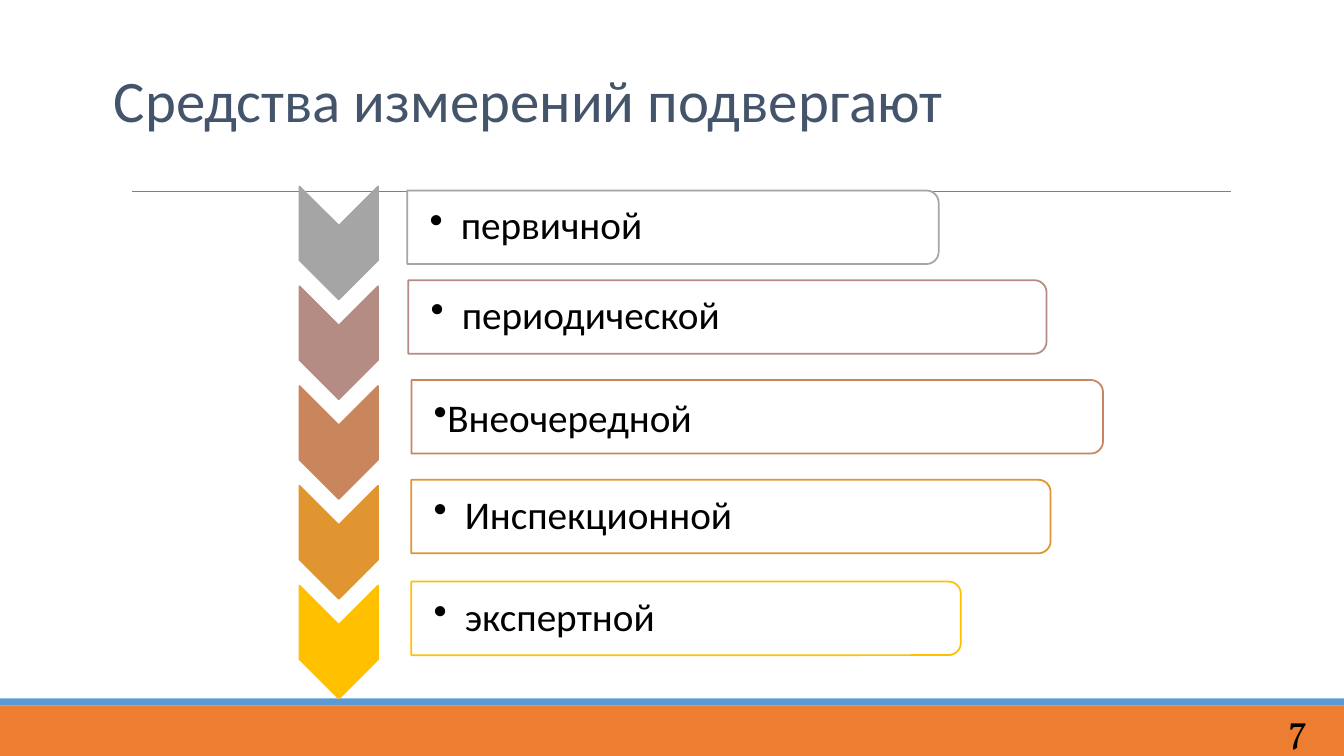
from lxml import etree
from pptx import Presentation
from pptx.dml.color import RGBColor
from pptx.enum.shapes import MSO_CONNECTOR, MSO_SHAPE
from pptx.enum.text import MSO_ANCHOR
from pptx.oxml.ns import qn
from pptx.util import Inches, Pt

RECTANGLE, CHEVRON = MSO_SHAPE.RECTANGLE, MSO_SHAPE.CHEVRON
ROUND_TOP = MSO_SHAPE.ROUND_2_SAME_RECTANGLE
STRAIGHT = MSO_CONNECTOR.STRAIGHT
TOP, MIDDLE, BOTTOM = MSO_ANCHOR.TOP, MSO_ANCHOR.MIDDLE, MSO_ANCHOR.BOTTOM

BLACK = RGBColor(0, 0, 0)
WHITE = RGBColor(0xFF, 0xFF, 0xFF)
SLATE = RGBColor(0x44, 0x54, 0x6A)
ORANGE = RGBColor(0xED, 0x7D, 0x31)
BLUE = RGBColor(0x5B, 0x9B, 0xD5)
RULE_GRAY = RGBColor(0x80, 0x80, 0x80)

SLIDE_W, SLIDE_H = 13.33, 7.5
STEP = 0.99
CHEVRON_W, CHEVRON_H = 0.78, 1.12
BAR_H, BAR_INSET = 0.73, 0.035
HANGING = 0.31

CHECKS = [
    ("первичной", RGBColor(0xA5, 0xA5, 0xA5), 4.04, 1.89, 5.27, HANGING),
    ("периодической", RGBColor(0xB4, 0x8C, 0x83), 4.05, 2.78, 6.33, HANGING),
    ("Внеочередной", RGBColor(0xC9, 0x86, 0x5C), 4.08, 3.77, 6.86, 0),
    ("Инспекционной", RGBColor(0xE1, 0x95, 0x30), 4.08, 4.76, 6.34, HANGING),
    ("экспертной", RGBColor(0xFF, 0xC0, 0x00), 4.08, 5.77, 5.45, HANGING),
]


def add_block(slide, kind, box, fill, outline=None):
    block = slide.shapes.add_shape(kind, *map(Inches, box))
    block.shadow.inherit = False
    block.fill.solid()
    block.fill.fore_color.rgb = fill
    if outline is None:
        block.line.fill.background()
    else:
        block.line.color.rgb = outline
        block.line.width = Pt(1.25)
    return block


def add_quarter_turned(slide, kind, box, fill, outline):
    left, top, width, height = box
    unturned = (left + (width - height) / 2, top + (height - width) / 2, height, width)
    block = add_block(slide, kind, unturned, fill, outline)
    block.rotation = 90
    return block


def add_text(slide, box, text, size, color, font_name, anchor):
    frame = slide.shapes.add_textbox(*map(Inches, box)).text_frame
    frame.word_wrap = True
    frame.vertical_anchor = anchor
    paragraph = frame.paragraphs[0]
    paragraph.text = text
    paragraph.font.size = Pt(size)
    paragraph.font.name = font_name
    paragraph.font.color.rgb = color
    return frame


def add_bullet(paragraph, indent):
    properties = paragraph._p.get_or_add_pPr()
    properties.set("marL", str(Inches(indent)))
    properties.set("indent", str(-Inches(indent)))
    bullet = etree.Element(qn("a:buChar"), char="•")
    properties.find(qn("a:defRPr")).addprevious(bullet)


def add_footer(slide, top, height):
    stripe = 0.07
    add_block(slide, RECTANGLE, (0, top + stripe, SLIDE_W, height - stripe), ORANGE)
    add_block(slide, RECTANGLE, (0, top, SLIDE_W, stripe), BLUE)
    number = add_text(slide, (12.68, top - 0.01, 0.5, height + 0.01),
                      "7", 28, BLACK, "Vollkorn", BOTTOM)
    number.paragraphs[0].line_spacing = 0.85


def add_heading(slide, left, top, width, height):
    rule = slide.shapes.add_connector(
        STRAIGHT, Inches(1.31), Inches(1.9), Inches(12.21), Inches(1.9))
    rule.line.color.rgb = RULE_GRAY
    rule.line.width = Pt(0.5)
    etree.SubElement(rule._element.spPr, qn("a:effectLst"))
    add_text(slide, (left, top, width, height),
             "Средства измерений подвергают", 42, SLATE, "Calibri", TOP)


def add_check_bar(slide, left, top, width, text, color, indent):
    bar = add_quarter_turned(slide, ROUND_TOP, (left, top, width, BAR_H), WHITE, color)
    white = bar._element.spPr.find(qn("a:solidFill"))[0]
    etree.SubElement(white, qn("a:alpha"), val="90000")
    frame = add_text(slide, (left, top + BAR_INSET, width - BAR_INSET, BAR_H - 2 * BAR_INSET),
                     text, 28, BLACK, "Calibri", MIDDLE)
    frame.margin_left = Inches(0.22)
    frame.margin_top = frame.margin_right = frame.margin_bottom = Inches(0.02)
    label = frame.paragraphs[0]
    if indent:
        label.line_spacing = 0.9
    add_bullet(label, indent)


def add_check_list(slide, left, top):
    for row, (text, color, bar_left, bar_top, width, indent) in enumerate(CHECKS):
        add_quarter_turned(slide, CHEVRON,
                           (left, top + row * STEP, CHEVRON_W, CHEVRON_H), color, color)
        add_check_bar(slide, bar_left, bar_top, width, text, color, indent)


def main():
    deck = Presentation()
    deck.slide_width, deck.slide_height = Inches(SLIDE_W), Inches(SLIDE_H)
    slide = deck.slides.add_slide(deck.slide_layouts[6])
    add_footer(slide, 6.93, 0.57)
    add_heading(slide, 1.03, 0.58, 10.29, 1.53)
    add_check_list(slide, 2.97, 1.85)
    deck.save("out.pptx")


if __name__ == "__main__":
    main()
